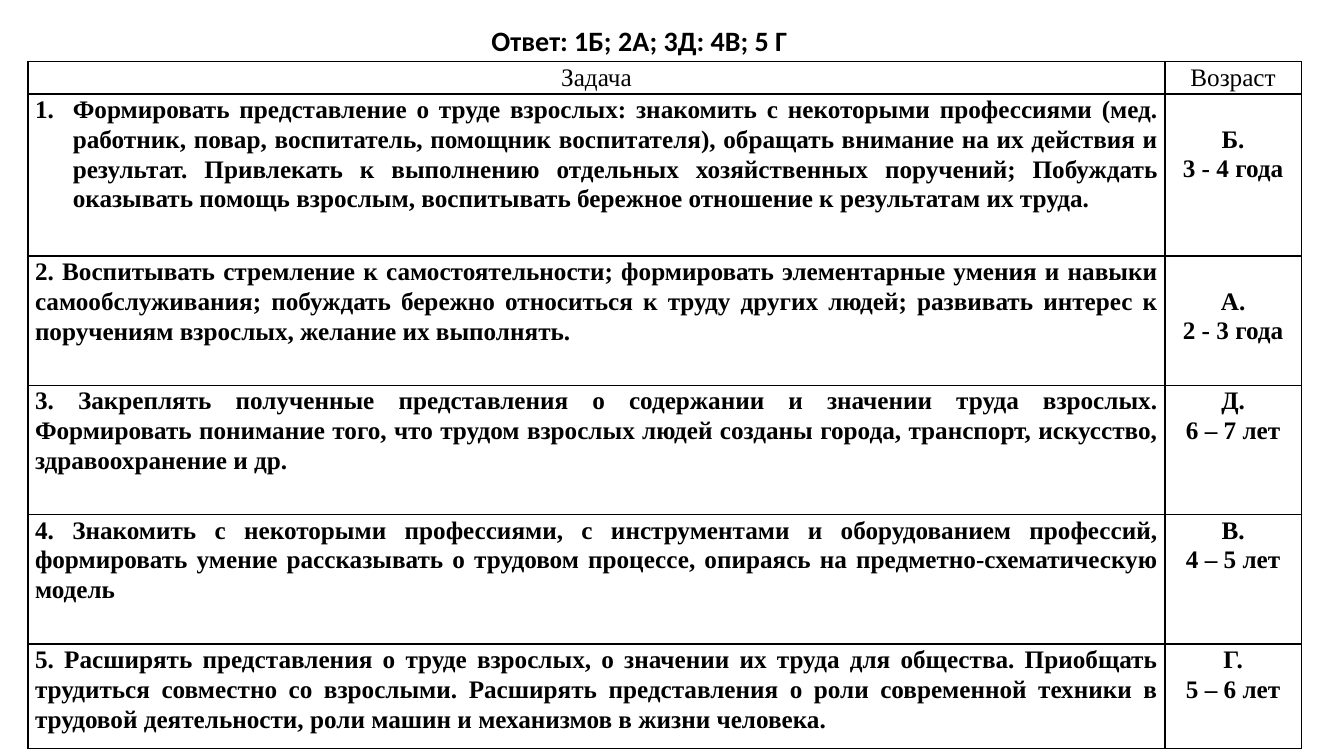
from lxml import etree
from pptx import Presentation
from pptx.dml.color import RGBColor
from pptx.enum.text import MSO_ANCHOR, MSO_AUTO_SIZE, PP_ALIGN
from pptx.oxml.ns import qn
from pptx.util import Pt

CENTER, JUSTIFY = PP_ALIGN.CENTER, PP_ALIGN.JUSTIFY
TOP, GROW = MSO_ANCHOR.TOP, MSO_AUTO_SIZE.SHAPE_TO_FIT_TEXT
COLORS = {"ink": "000000", "paper": "FFFFFF"}
HEAD = ("Задача", "Возраст")
# Task, age lines, row height, space above the age
TASKS = [
    ("Формировать представление о труде взрослых: знакомить с некоторыми профессиями "
     "(мед. работник, повар, воспитатель, помощник воспитателя), обращать внимание на их "
     "действия и результат. Привлекать к выполнению отдельных хозяйственных поручений; "
     "Побуждать оказывать помощь взрослым, воспитывать бережное отношение к результатам "
     "их труда.", "Б.\n3 - 4 года", 115.7, 21.2),
    ("2. Воспитывать стремление к самостоятельности; формировать элементарные умения и "
     "навыки самообслуживания; побуждать бережно относиться к труду других людей; развивать "
     "интерес к поручениям взрослых, желание их выполнять.", "А.\n2 - 3 года", 92.4, 21.2),
    ("3. Закреплять полученные представления о содержании и значении труда взрослых. "
     "Формировать понимание того, что трудом взрослых людей созданы города, транспорт, "
     "искусство, здравоохранение и др.", "Д.\n6 – 7 лет", 92.4, 0),
    ("4. Знакомить с некоторыми профессиями, с инструментами и оборудованием профессий, "
     "формировать умение рассказывать о трудовом процессе, опираясь на "
     "предметно-схематическую модель", "В.\n4 – 5 лет", 92.4, 0),
    ("5. Расширять представления о труде взрослых, о значении их труда для общества. "
     "Приобщать трудиться совместно со взрослыми. Расширять представления о роли "
     "современной техники в трудовой деятельности, роли машин и механизмов в жизни "
     "человека.", "Г.\n5 – 6 лет", 74.5, 0),
]


def color(name):
    return RGBColor.from_string(COLORS[name])


def style(para, face, size, bold, align):
    para.alignment = align
    for run in para.runs:
        font = run.font
        font.name, font.size, font.bold = face, Pt(size), bold
        font.color.rgb = color("ink")


def border(cell):
    props = cell._tc.get_or_add_tcPr()
    for i, side in enumerate(("lnL", "lnR", "lnT", "lnB")):
        line = etree.Element(qn("a:" + side), w=str(Pt(1)))
        fill = etree.SubElement(line, qn("a:solidFill"))
        etree.SubElement(fill, qn("a:srgbClr"), val=COLORS["ink"])
        props.insert(i, line)


def number(para):
    """Turn the paragraph into the first item of a numbered list."""
    props = para._p.get_or_add_pPr()
    props.set("marL", str(Pt(27)))
    props.set("indent", str(Pt(-27)))
    etree.SubElement(props, qn("a:buFont"), typeface="+mj-lt")
    etree.SubElement(props, qn("a:buAutoNum"), type="arabicPeriod")


def write(cell, text, bold, align, top=0):
    cell.fill.solid()
    cell.fill.fore_color.rgb = color("paper")
    border(cell)
    cell.margin_left = cell.margin_right = Pt(5)
    cell.margin_top, cell.margin_bottom = Pt(top), 0
    cell.vertical_anchor = TOP
    cell.text_frame.text = text
    for para in cell.text_frame.paragraphs:
        para.line_spacing = 1.07
        style(para, "Times New Roman", 18, bold, align)


def add_title(slide, left, top, width, height):
    box = slide.shapes.add_textbox(Pt(left), Pt(top), Pt(width), Pt(height))
    frame = box.text_frame
    frame.word_wrap = False
    frame.auto_size = GROW
    frame.text = "Ответ: 1Б; 2А; 3Д: 4В; 5 Г"
    style(frame.paragraphs[0], "Calibri", 20, True, None)


def add_tasks(slide, left, top, width, age_width):
    heights = [22.9] + [task[2] for task in TASKS]
    table = slide.shapes.add_table(len(heights), 2, Pt(left), Pt(top),
                                   Pt(width), Pt(sum(heights))).table
    table.columns[0].width = Pt(width - age_width)
    table.columns[1].width = Pt(age_width)
    for row, height in zip(table.rows, heights):
        row.height = Pt(height)
    for col, text in enumerate(HEAD):
        write(table.cell(0, col), text, False, CENTER)
    for row, (task, age, _, gap) in enumerate(TASKS, 1):
        write(table.cell(row, 0), task, True, JUSTIFY)
        write(table.cell(row, 1), age, True, CENTER, gap)
    number(table.cell(1, 0).text_frame.paragraphs[0])


def main():
    deck = Presentation()
    deck.slide_width, deck.slide_height = Pt(960), Pt(540)
    slide = deck.slides.add_slide(deck.slide_layouts[6])
    add_title(slide, 344, 13, 227.5, 31.5)
    add_tasks(slide, 20, 44, 909.4, 97.2)
    deck.save("out.pptx")


if __name__ == "__main__":
    main()
